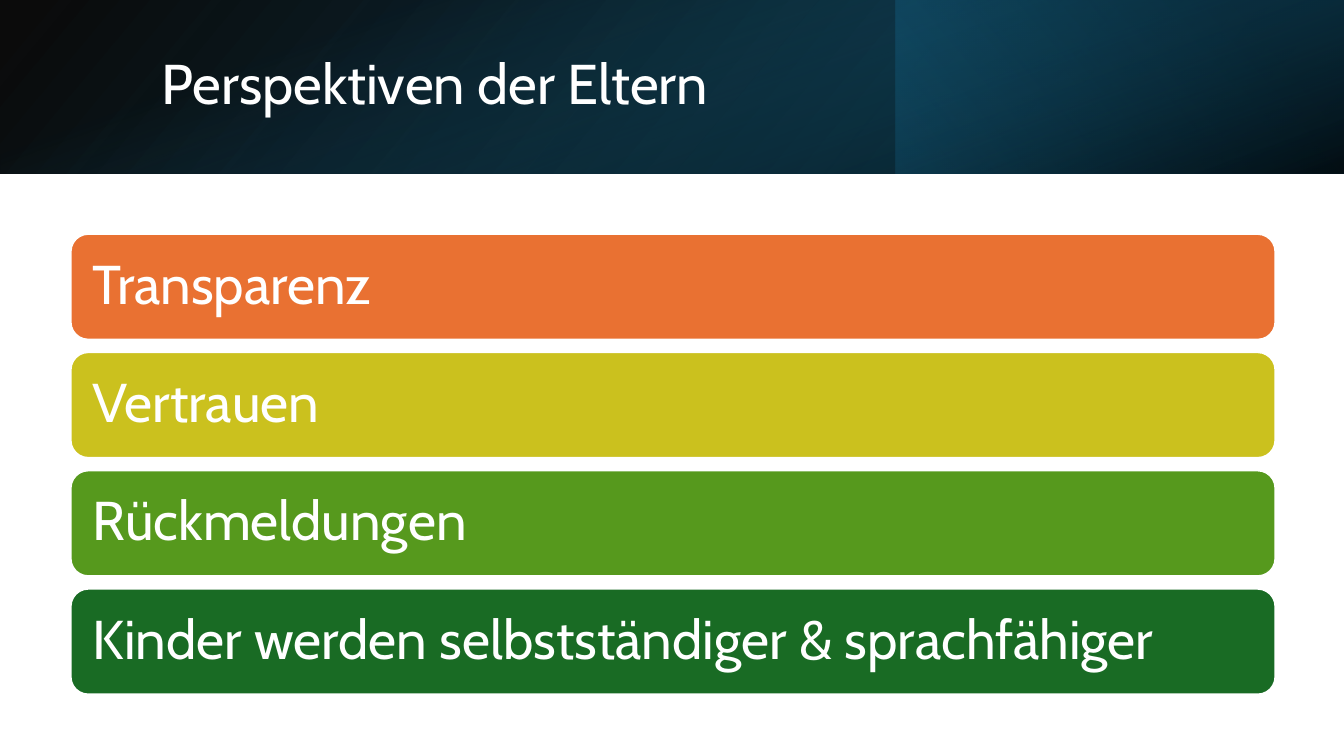
from lxml.etree import SubElement
from pptx import Presentation
from pptx.dml.color import RGBColor
from pptx.enum.shapes import MSO_SHAPE as Preset
from pptx.enum.text import MSO_ANCHOR as Anchor, PP_ALIGN as Align
from pptx.oxml.ns import qn
from pptx.util import Inches, Pt

WIDTH, HEIGHT, BAND_HEIGHT = 13.33, 7.5, 1.72
EXPECTATIONS = [
    ("Transparenz", "E97132"),
    ("Vertrauen", "CBC11E"),
    ("Rückmeldungen", "56991D"),
    ("Kinder werden selbstständiger & sprachfähiger", "196B24"),
]


def color(value):
    """Turn a hex string into a colour."""
    return RGBColor.from_string(value)


def apply_format(target, values):
    """Set every attribute named in a dict of format values."""
    for name, value in values.items():
        setattr(target, name, value)


def write(holder, wording, size, inset=None):
    """Put one left-aligned white line, centred vertically, into a shape."""
    frame = holder.text_frame
    frame.text = wording
    apply_format(frame, {"word_wrap": True, "vertical_anchor": Anchor.MIDDLE})
    if inset is not None:
        apply_format(frame, {"margin_left": Inches(inset), "margin_right": Inches(inset)})
    line = frame.paragraphs[0]
    apply_format(line, {"alignment": Align.LEFT, "line_spacing": 0.9})
    apply_format(line.font, {"name": "Cabin", "size": Pt(size)})
    line.font.color.rgb = color("FFFFFF")


def add_panel(slide, preset, box):
    """Add a preset shape without a shadow at an inch box."""
    panel = slide.shapes.add_shape(preset, *map(Inches, box))
    panel.shadow.inherit = False
    return panel


def add_glow(slide, box, stops, angle, rotation=0, flipped=False):
    """Add a borderless rectangle with a translucent two-stop gradient."""
    glow = add_panel(slide, Preset.RECTANGLE, box)
    glow.rotation = rotation
    glow.line.fill.background()
    glow.fill.gradient()
    glow.fill.gradient_angle = 360 - angle
    for stop, (position, tint, _) in zip(glow.fill.gradient_stops, stops):
        stop.position = position / 100
        stop.color.rgb = color(tint)
    properties = glow._element.spPr
    for tint, (_, _, opacity) in zip(properties.iter(qn("a:srgbClr")), stops):
        SubElement(tint, qn("a:alpha")).set("val", str(opacity * 1000))
    if flipped:
        properties.find(qn("a:xfrm")).set("flipH", "1")


def add_header(slide, box, heading):
    """Layer the gradient band in the box and set the title over it."""
    left, top, width, height = box
    add_glow(slide, box, [(0, "000000", 96), (100, "104862", 100)], 140, flipped=True)
    add_glow(slide, (left + width * 2 / 3, top, width / 3, height),
             [(19, "0B3041", 68), (100, "156082", 79)], 320, rotation=180)
    upright = (left + (width - height) / 2, top + (height - width) / 2, height, width)
    add_glow(slide, upright, [(23, "156082", 0), (99, "000000", 74)], 340, rotation=90)

    title = slide.shapes.title
    apply_format(title, {"left": Inches(left + 1.5), "top": Inches(top + 0.38),
                         "width": Inches(10.98), "height": Inches(0.96)})
    write(title, heading, 40)
    slide.shapes._spTree.append(title._element)


def add_bars(slide, box, entries, bar_height=1.05):
    """Spread one rounded bar per entry evenly down the box."""
    left, top, width, height = box
    pitch = (height - bar_height) / (len(entries) - 1)
    for row, (wording, tint) in enumerate(entries):
        bar = add_panel(slide, Preset.ROUNDED_RECTANGLE,
                        (left, top + row * pitch, width, bar_height))
        bar.fill.solid()
        bar.fill.fore_color.rgb = color(tint)
        bar.line.color.rgb = color("FFFFFF")
        bar.line.width = Pt(1.5)
        write(bar, wording, 39, inset=0.17)


def main():
    """Build the slide and save it."""
    deck = Presentation()
    apply_format(deck, {"slide_width": Inches(WIDTH), "slide_height": Inches(HEIGHT)})
    slide = deck.slides.add_slide(deck.slide_layouts[5])
    add_header(slide, (0, 0, WIDTH, BAND_HEIGHT), "Perspektiven der Eltern")
    add_bars(slide, (0.7, 2.32, 11.95, 4.57), EXPECTATIONS)
    deck.save("out.pptx")


if __name__ == "__main__":
    main()
